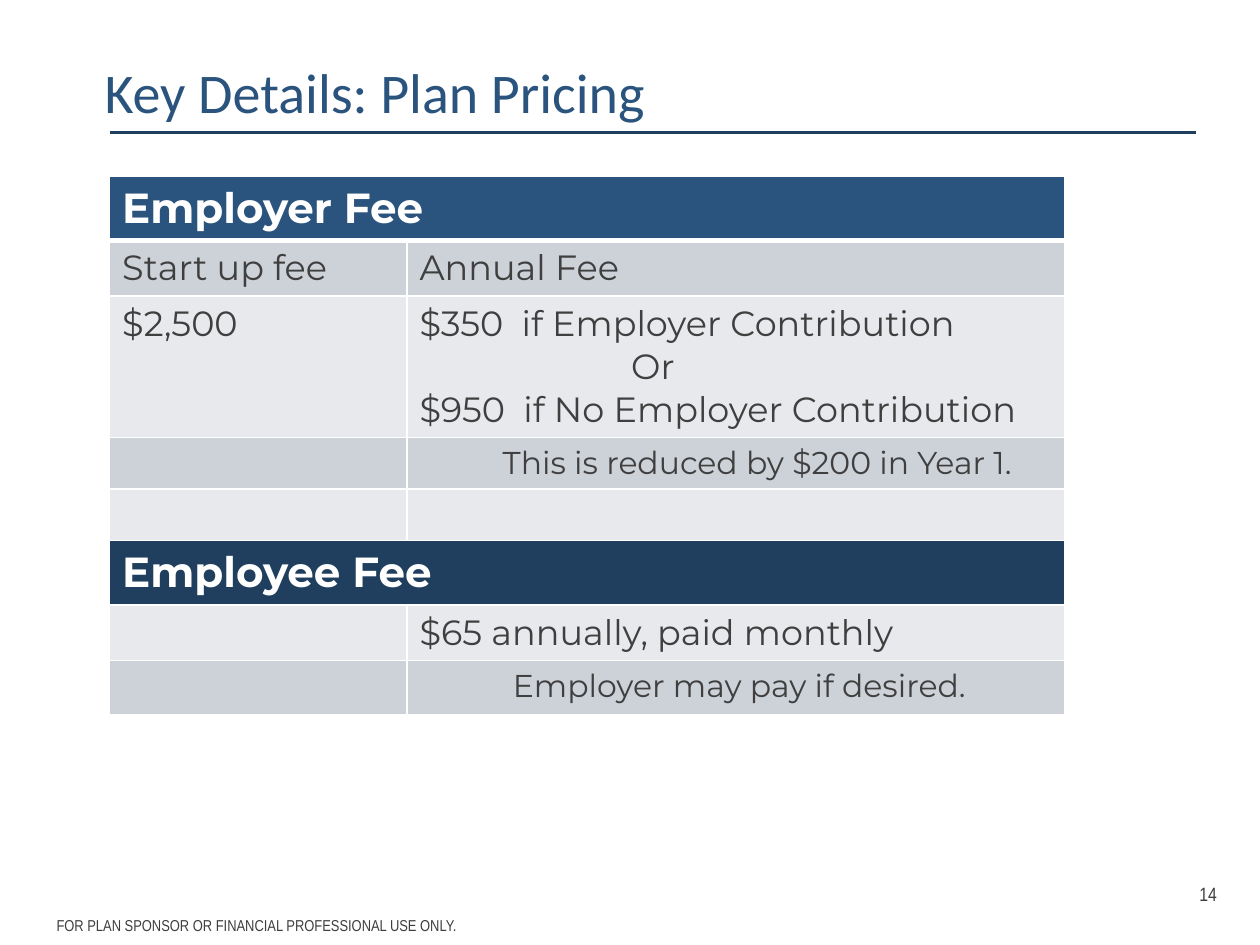
from pptx import Presentation
from pptx.dml.color import RGBColor
from pptx.enum.shapes import MSO_CONNECTOR
from pptx.enum.text import MSO_ANCHOR, PP_ALIGN
from pptx.oxml.ns import qn
from pptx.util import Inches, Pt
from lxml.etree import SubElement

BLUE = RGBColor(0x2A, 0x54, 0x7E)
NAVY = RGBColor(0x20, 0x3F, 0x5E)
GRAY = RGBColor(0x3F, 0x3F, 0x3F)
WHITE = RGBColor(0xFF, 0xFF, 0xFF)
DARK_BAND = RGBColor(0xCD, 0xD1, 0xD8)
LIGHT_BAND = RGBColor(0xE8, 0xE9, 0xEC)

# Content: each cell is a list of (text, size, indent in inches)
TITLE = "Key Details: Plan Pricing"
COLUMN_WIDTHS = [2.36, 5.22]
ROWS = [  # height, fill, cells; a single cell spans the table
    (0.51, BLUE, [[("Employer Fee", 24, 0)]]),
    (0.44, DARK_BAND, [[("Start up fee", 20, 0)], [("Annual Fee", 20, 0)]]),
    (1.12, LIGHT_BAND, [
        [("$2,500", 20, 0)],
        [("$350  if Employer Contribution", 20, 0),
         ("Or", 20, 1.68),
         ("$950  if No Employer Contribution", 20, 0)],
    ]),
    (0.41, DARK_BAND, [[], [("This is reduced by $200 in Year 1.", 18, 0.66)]]),
    (0.41, LIGHT_BAND, [[], []]),
    (0.51, NAVY, [[("Employee Fee", 24, 0)]]),
    (0.44, LIGHT_BAND, [[], [("$65 annually, paid monthly", 20, 0)]]),
    (0.43, DARK_BAND, [[], [("Employer may pay if desired.", 18, 0.74)]]),
]
SMALL_TEXTS = [  # text, size, left, top, width, height
    ("14", 11, 9.42, 6.95, 0.42, 0.4),
    ("FOR PLAN SPONSOR OR FINANCIAL PROFESSIONAL USE ONLY.", 9, 0.35, 7.22, 9.15, 0.28),
]


def set_font(paragraph, name, size, color, bold=False):
    paragraph.font.name = name
    paragraph.font.size = Pt(size)
    paragraph.font.bold = bold
    paragraph.font.color.rgb = color


def set_borders(cell, top=1, bottom=1):
    properties = cell._tc.get_or_add_tcPr()
    for side, width in (("L", 1), ("R", 1), ("T", top), ("B", bottom)):
        line = SubElement(properties, qn(f"a:ln{side}"), w=str(Pt(width)))
        fill = SubElement(line, qn("a:solidFill"))
        SubElement(fill, qn("a:srgbClr"), val=str(WHITE))


def fill_cell(cell, lines, color):
    for index, (text, size, indent) in enumerate(lines):
        frame = cell.text_frame
        paragraph = frame.add_paragraph() if index else frame.paragraphs[0]
        paragraph.text = text
        paragraph.alignment = PP_ALIGN.LEFT
        paragraph._p.get_or_add_pPr().set("marL", str(Inches(indent)))
        set_font(paragraph, "Montserrat", size, color, bold=size == 24)


deck = Presentation()
deck.slide_width, deck.slide_height = Inches(10), Inches(7.5)
page = deck.slides.add_slide(deck.slide_layouts[5])

# Title and rule
title = page.shapes.title
title.left, title.top, title.width, title.height = map(Inches, (0.73, 0.16, 9, 1.12))
title.text_frame.text = TITLE
title.text_frame.vertical_anchor = MSO_ANCHOR.MIDDLE
heading = title.text_frame.paragraphs[0]
heading.alignment = PP_ALIGN.LEFT
set_font(heading, "Calibri", 32, BLUE)

rule = page.shapes.add_connector(
    MSO_CONNECTOR.STRAIGHT, Inches(0.87), Inches(1.05), Inches(9.49), Inches(1.05))
rule.line.color.rgb = NAVY
rule.line.width = Pt(2)
SubElement(rule._element.spPr, qn("a:effectLst"))

# Fee table
table = page.shapes.add_table(
    len(ROWS), len(COLUMN_WIDTHS), Inches(0.87), Inches(1.4),
    Inches(sum(COLUMN_WIDTHS)), Inches(sum(row[0] for row in ROWS))).table
table.first_row = table.horz_banding = False
for column, width in zip(table.columns, COLUMN_WIDTHS):
    column.width = Inches(width)
for number, (height, fill, contents) in enumerate(ROWS):
    table.rows[number].height = Inches(height)
    is_heading = len(contents) == 1
    for column in range(len(COLUMN_WIDTHS)):
        cell = table.cell(number, column)
        set_borders(cell, top=3 if number == 1 else 1, bottom=3 if number == 0 else 1)
        cell.fill.solid()
        cell.fill.fore_color.rgb = fill
    if is_heading:
        table.cell(number, 0).merge(table.cell(number, len(COLUMN_WIDTHS) - 1))
    for column, lines in enumerate(contents):
        fill_cell(table.cell(number, column), lines, WHITE if is_heading else GRAY)

# Page number and footer
for text, size, *place in SMALL_TEXTS:
    box = page.shapes.add_textbox(*map(Inches, place))
    box.text_frame.word_wrap = True
    box.text_frame.text = text
    set_font(box.text_frame.paragraphs[0], "Arial Narrow", size, GRAY)

deck.save("out.pptx")
